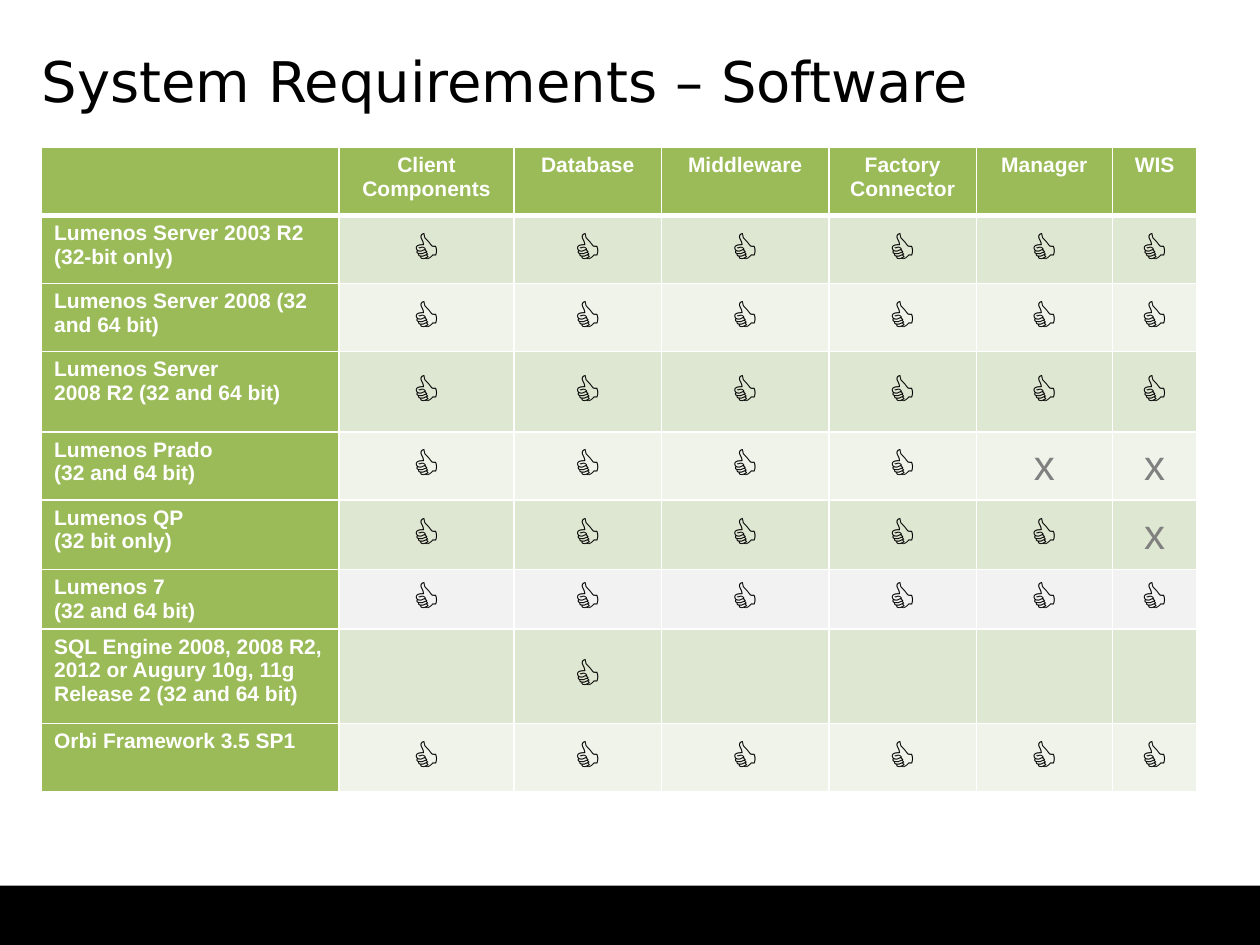
from lxml.etree import SubElement
from pptx import Presentation
from pptx.dml.color import RGBColor
from pptx.enum.shapes import MSO_SHAPE
from pptx.enum.text import MSO_ANCHOR, PP_ALIGN
from pptx.oxml.ns import qn
from pptx.util import Inches, Pt

GREEN, DARK, LIGHT, GRAY = "9BBB59", "DEE7D1", "EFF3EA", "F2F2F2"
YES, NO = "👍", "x"


def rgb(color):
    return RGBColor.from_string(color)


def format_cell(cell, fill, size, color, bold, align, top=1, bottom=1):
    """Set borders and fill, then the look of the cell's text."""
    tc_pr = cell._tc.get_or_add_tcPr()
    for side, width in (("L", 1), ("R", 1), ("T", top), ("B", bottom)):
        ln = SubElement(tc_pr, qn(f"a:ln{side}"), w=str(Pt(width)))
        line_fill = SubElement(ln, qn("a:solidFill"))
        SubElement(line_fill, qn("a:srgbClr"), val="FFFFFF")
    cell.fill.solid()
    cell.fill.fore_color.rgb = rgb(fill)
    for p in cell.text_frame.paragraphs:
        p.alignment = align
        for r in p.runs:
            r.font.name = "Arial"
            r.font.size = Pt(size)
            r.font.bold = bold
            r.font.color.rgb = rgb(color)


prs = Presentation()
prs.slide_width, prs.slide_height = Inches(10), Inches(7.5)
s = prs.slides.add_slide(prs.slide_layouts[5])

# Bottom bar
bar = s.shapes.add_shape(MSO_SHAPE.RECTANGLE, Inches(0), Inches(7.03), Inches(10), Inches(0.47))
bar.shadow.inherit = False
bar.fill.solid()
bar.fill.fore_color.rgb = rgb("000000")
bar.line.fill.background()

# Title
title = s.shapes.title
title.left, title.top = Inches(0.33), Inches(0.42)
title.width, title.height = Inches(9.2), Inches(0.82)
tf = title.text_frame
tf.text = "System Requirements – Software"
tf.margin_left = tf.margin_right = tf.margin_top = tf.margin_bottom = 0
tf.vertical_anchor = MSO_ANCHOR.TOP
p = tf.paragraphs[0]
p.alignment = PP_ALIGN.LEFT
p.line_spacing = Pt(35)
r = p.runs[0]
r.font.name = "DejaVu Sans"
r.font.size = Pt(32)
r.font.color.rgb = rgb("000000")

# Requirements: label, row fill, one mark per component
headers = ["", "Client Components", "Database", "Middleware", "Factory Connector", "Manager", "WIS"]
rows = [
    ("Lumenos Server 2003 R2 (32-bit only)", DARK, [YES] * 6),
    ("Lumenos Server 2008 (32 and 64 bit)", LIGHT, [YES] * 6),
    ("Lumenos Server\n2008 R2 (32 and 64 bit)", DARK, [YES] * 6),
    ("Lumenos Prado\n(32 and 64 bit)", LIGHT, [YES] * 4 + [NO] * 2),
    ("Lumenos QP\n(32 bit only)", DARK, [YES] * 5 + [NO]),
    ("Lumenos 7\n(32 and 64 bit)", GRAY, [YES] * 6),
    ("SQL Engine 2008, 2008 R2, 2012 or Augury 10g, 11g Release 2 (32 and 64 bit)", DARK,
     ["", YES, "", "", "", ""]),
    ("Orbi Framework 3.5 SP1", LIGHT, [YES] * 6),
]
col_widths = [2.36, 1.39, 1.17, 1.33, 1.17, 1.08, 0.67]
row_heights = [0.54, 0.54, 0.54, 0.64, 0.54, 0.55, 0.45, 0.75, 0.54]

# Table grid
table = s.shapes.add_table(len(row_heights), len(col_widths), Inches(0.33), Inches(1.17),
                           Inches(sum(col_widths)), Inches(sum(row_heights))).table
for column, width in zip(table.columns, col_widths):
    column.width = Inches(width)
for row, height in zip(table.rows, row_heights):
    row.height = Inches(height)

# Header row
for j, header in enumerate(headers):
    cell = table.cell(0, j)
    cell.text_frame.text = header
    format_cell(cell, GREEN, 12, "FFFFFF", True, PP_ALIGN.CENTER, bottom=3)

# Body rows
for i, (label, fill, marks) in enumerate(rows, start=1):
    top = 3 if i == 1 else 1
    cell = table.cell(i, 0)
    cell.text_frame.text = label
    format_cell(cell, GREEN, 12, "FFFFFF", True, PP_ALIGN.LEFT, top=top)
    for j, mark in enumerate(marks, start=1):
        cell = table.cell(i, j)
        cell.text_frame.text = mark
        cell.vertical_anchor = MSO_ANCHOR.MIDDLE
        color = "808080" if mark == NO else "000000"
        format_cell(cell, fill, 24, color, False, PP_ALIGN.CENTER, top=top)

prs.save("out.pptx")
